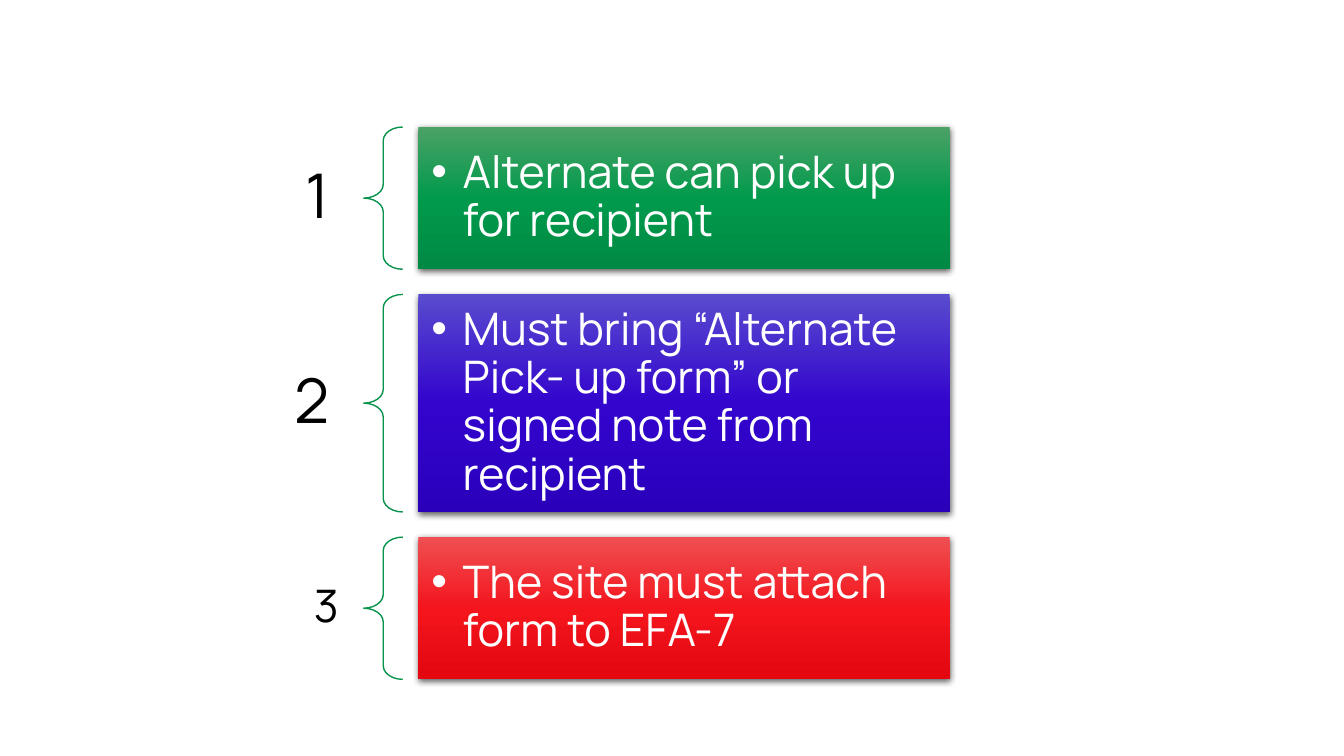
from copy import deepcopy

from lxml import etree
from pptx import Presentation, util as u
from pptx.dml.color import RGBColor
from pptx.enum import shapes, text
from pptx.oxml import ns

FONT = "Manrope"
COLOURS = {
    "number": "000000", "brace": "08934C", "label": "FFFFFF", "shadow": "000000",
    "green": ("4BA166", "019A4C", "008A43"),
    "blue": ("594BCE", "3305CD", "2A00BB"),
    "red": ("EF4F52", "F4151D", "E4070F"),
}
STEPS = [
    ("1", 44, 17, "green", "Alternate can pick up for recipient"),
    ("2", 44, 26, "blue", "Must bring “Alternate Pick- up form” or signed note from recipient"),
    ("3", 32, 17, "red", "The site must attach form to EFA-7"),
]
NUMBER_ROWS, GAP_ROWS = 17, 3
NUMBER_SHARE, BRACE_SHARE, GAP_SHARE, PANEL_SHARE = 0.25, 0.05, 0.02, 0.68


def add_child(parent, tag, **attributes):
    """Append a drawing element with the given attributes."""
    return etree.SubElement(parent, ns.qn(f"a:{tag}"), {k: str(v) for k, v in attributes.items()})


def write(shape, words, size, colour, align, inset, after):
    """Put one paragraph, centred vertically, into a shape."""
    frame = shape.text_frame
    frame.word_wrap = True
    frame.vertical_anchor = text.MSO_ANCHOR.MIDDLE
    frame.margin_left = frame.margin_right = u.Inches(inset[0])
    frame.margin_top = frame.margin_bottom = u.Inches(inset[1])
    para = frame.paragraphs[0]
    para.alignment = align
    para.line_spacing = 0.9
    para.space_after = u.Pt(size * after)
    span = para.add_run()
    span.text = words
    span.font.name = FONT
    span.font.size = u.Pt(size)
    span.font.color.rgb = RGBColor.from_string(COLOURS[colour])
    return para


def add_number(page, box, words, size):
    """Add the step number, right-aligned in its box."""
    shape = page.shapes.add_textbox(*map(u.Inches, box))
    inset = (0.34, 0.12) if size > 40 else (0.25, 0.09)
    write(shape, words, size, "number", text.PP_ALIGN.RIGHT, inset, 0.35)


def add_brace(page, box):
    """Add the brace that ties a number to its panel."""
    brace = page.shapes.add_shape(shapes.MSO_SHAPE.LEFT_BRACE, *map(u.Inches, box))
    brace.adjustments[0] = 0.35
    brace.adjustments[1] = 0.5
    brace.shadow.inherit = False
    brace.fill.background()
    brace.line.color.rgb = RGBColor.from_string(COLOURS["brace"])
    brace.line.width = u.Pt(1)


def add_panel(page, box, colour, words):
    """Add a shaded panel with its bulleted instruction."""
    panel = page.shapes.add_shape(shapes.MSO_SHAPE.RECTANGLE, *map(u.Inches, box))
    panel.line.fill.background()
    panel.fill.gradient()
    panel.fill.gradient_angle = 270
    stops = panel._element.spPr.find(".//" + ns.qn("a:gsLst"))
    stops.append(deepcopy(stops[-1]))
    for stop, position, tone in zip(panel.fill.gradient_stops, (0, 0.5, 1), COLOURS[colour]):
        stop.position = position
        stop.color.rgb = RGBColor.from_string(tone)

    panel.shadow.inherit = False
    effects = panel._element.spPr.find(ns.qn("a:effectLst"))
    shadow = add_child(effects, "outerShdw", blurRad=u.Pt(4.5), dist=u.Pt(1.5),
                       dir=5400000, rotWithShape=0)
    shade = add_child(shadow, "srgbClr", val=COLOURS["shadow"])
    add_child(shade, "alpha", val=63000)

    para = write(panel, words, 32, "label", text.PP_ALIGN.LEFT, (0.13, 0.13), 0.15)
    properties = para._p.get_or_add_pPr()
    properties.set("marL", str(u.Inches(0.31)))
    properties.set("indent", str(u.Inches(-0.31)))
    add_child(properties, "buFont", typeface="Arial")
    add_child(properties, "buChar", char="•")


def add_step(page, box, row, number, size, colour, words):
    """Lay out number, brace and panel across one step's box."""
    left, top, width, height = box
    number_height = NUMBER_ROWS * row
    number_top = top + (height - number_height) / 2
    add_number(page, (left, number_top, width * NUMBER_SHARE, number_height), number, size)
    brace_left = left + width * NUMBER_SHARE
    add_brace(page, (brace_left, top, width * BRACE_SHARE, height))
    panel_left = brace_left + width * (BRACE_SHARE + GAP_SHARE)
    add_panel(page, (panel_left, top, width * PANEL_SHARE, height), colour, words)


def add_steps(page, box):
    """Stack the steps in a box, sharing its height by rows."""
    left, top, width, height = box
    row = height / (sum(step[2] for step in STEPS) + GAP_ROWS * (len(STEPS) - 1))
    for number, size, rows, colour, words in STEPS:
        add_step(page, (left, top, width, rows * row), row, number, size, colour, words)
        top += (rows + GAP_ROWS) * row


def main():
    """Build the slide and save it."""
    deck = Presentation()
    deck.slide_width, deck.slide_height = u.Inches(13.33), u.Inches(7.5)
    page = deck.slides.add_slide(deck.slide_layouts[6])
    add_steps(page, (1.67, 1.26, 7.75, 5.48))
    deck.save("out.pptx")


if __name__ == "__main__":
    main()
